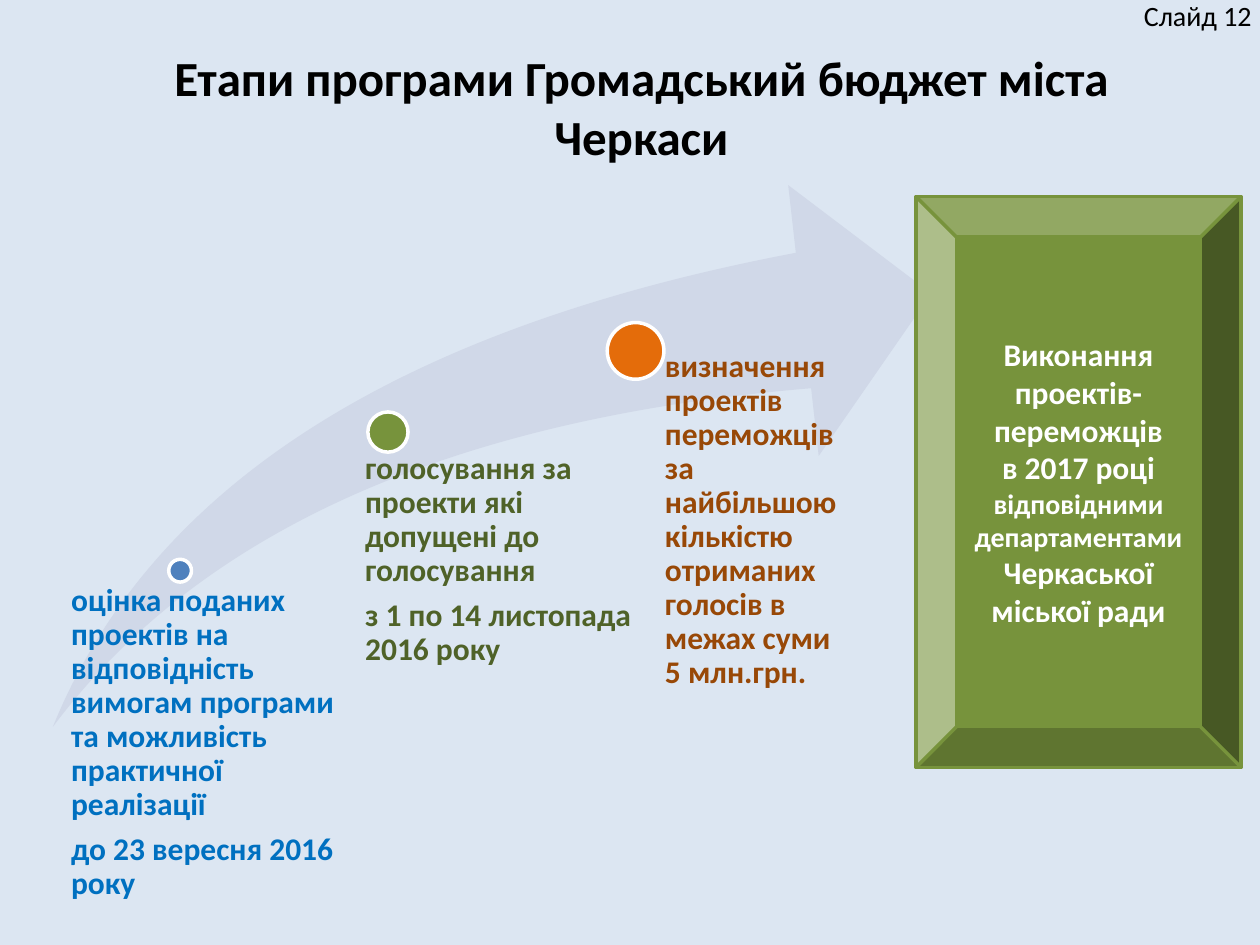
import pptx
import pptx.util
import pptx.dml.color
import pptx.enum.shapes
import pptx.enum.text

Pt = pptx.util.Pt
RGB = pptx.dml.color.RGBColor
SHAPE = pptx.enum.shapes.MSO_SHAPE
ALIGN = pptx.enum.text.PP_ALIGN
ANCHOR = pptx.enum.text.MSO_ANCHOR

FONT = "Calibri"
SKY = RGB(0xDC, 0xE6, 0xF2)
MIST = RGB(0xD0, 0xD8, 0xE8)
WHITE = RGB(0xFF, 0xFF, 0xFF)
BLACK = RGB(0, 0, 0)
BLUE = RGB(0x4F, 0x81, 0xBD)
AZURE = RGB(0x00, 0x70, 0xC0)
GREEN = RGB(0x77, 0x93, 0x3C)
MOSS = RGB(0x4F, 0x62, 0x28)
ORANGE = RGB(0xE4, 0x6C, 0x0A)
BROWN = RGB(0x98, 0x48, 0x07)

STEPS = [
    ((72.7, 220.3, 13), BLUE, (3.6, 228.2, 160.6, 205.9), AZURE,
     ["оцінка поданих проектів на відповідність вимогам програми та "
      "можливість практичної реалізації", "до 23 вересня 2016 року"]),
    ((191.5, 141.1, 23), GREEN, (166.3, 152.6, 168.5, 168.5), MOSS,
     ["голосування за проекти які допущені до голосування",
      "з 1 по 14 листопада 2016 року"]),
    ((333, 94.7, 32.4), ORANGE, (332.6, 94.3, 118.8, 215.3), BROWN,
     ["визначення проектів переможців за найбільшою кількістю отриманих "
      "голосів в межах суми 5 млн.грн."]),
]
GOAL = [
    [("Виконання проектів-переможців", 18)],
    [("в 2017 році ", 18), ("відповідними департаментами ", 16),
     ("Черкаської міської ради", 18)],
]


def style(item, size, color, bold=True):
    """Set the font of a paragraph or run."""
    font = item.font
    font.name, font.size, font.bold = FONT, Pt(size), bold
    font.color.rgb = color


def add_shape(slide, kind, box, fill, line=None):
    """Add a flat preset shape, outlined if a line colour is given."""
    shape = slide.shapes.add_shape(kind, *map(Pt, box))
    shape.shadow.inherit = False
    shape.fill.solid()
    shape.fill.fore_color.rgb = fill
    if line is None:
        shape.line.fill.background()
    else:
        shape.line.color.rgb = line
        shape.line.width = Pt(2)
    return shape


def add_title(slide, box, text):
    """Move and fill the title placeholder."""
    title = slide.shapes.title
    title.left, title.top, title.width, title.height = map(Pt, box)
    frame = title.text_frame
    frame.text = text
    frame.word_wrap = True
    frame.vertical_anchor = ANCHOR.MIDDLE
    frame.paragraphs[0].alignment = ALIGN.CENTER
    style(frame.paragraphs[0], 28, BLACK)


def add_step(slide, left, top, step):
    """Add one dot on the arrow and the text that goes with it."""
    (mid_x, mid_y, size), fill, (x, y, width, height), color, lines = step
    dot = (left + mid_x - size / 2, top + mid_y - size / 2, size, size)
    add_shape(slide, SHAPE.OVAL, dot, fill, WHITE)
    label = slide.shapes.add_textbox(
        Pt(left + x), Pt(top + y), Pt(width), Pt(height))
    frame = label.text_frame
    frame.word_wrap = True
    frame.margin_left = Pt(size * 0.53)
    frame.margin_top = frame.margin_right = frame.margin_bottom = 0
    frame.text = "\n".join(lines)
    for para in frame.paragraphs:
        para.line_spacing = 0.9
        para.space_after = Pt(6.3)
        style(para, 18, color)


def add_path(slide, box):
    """Add the rising arrow with its steps."""
    arrow = add_shape(slide, SHAPE.SWOOSH_ARROW, box, MIST)
    arrow.adjustments[0] = arrow.adjustments[1] = 0.25
    for step in STEPS:
        add_step(slide, box[0], box[1], step)


def add_goal(slide, box):
    """Add the bevelled panel with the final stage."""
    frame = add_shape(slide, SHAPE.BEVEL, box, GREEN, GREEN).text_frame
    frame.word_wrap = True
    frame.vertical_anchor = ANCHOR.MIDDLE
    for index, parts in enumerate(GOAL):
        para = frame.add_paragraph() if index else frame.paragraphs[0]
        para.alignment = ALIGN.CENTER
        for text, size in parts:
            run = para.add_run()
            run.text = text
            style(run, size, WHITE)


def add_mark(slide, box, text):
    """Add the slide number label."""
    frame = slide.shapes.add_textbox(*map(Pt, box)).text_frame
    frame.word_wrap = True
    frame.text = text
    style(frame.paragraphs[0], 16, BLACK, False)


def main():
    """Build and save the slide."""
    deck = pptx.Presentation()
    deck.slide_width, deck.slide_height = Pt(720), Pt(540)
    slide = deck.slides.add_slide(deck.slide_layouts[5])
    slide.background.fill.solid()
    slide.background.fill.fore_color.rgb = SKY
    add_title(slide, (42.5, 20.9, 648, 80),
              "Етапи програми Громадський бюджет міста Черкаси")
    add_path(slide, (30.2, 105.8, 502, 309.6))
    add_goal(slide, (523.4, 112.3, 185.8, 326.2))
    add_mark(slide, (646.6, -4.3, 84.2, 26.6), "Слайд 12")
    deck.save("out.pptx")


if __name__ == "__main__":
    main()
